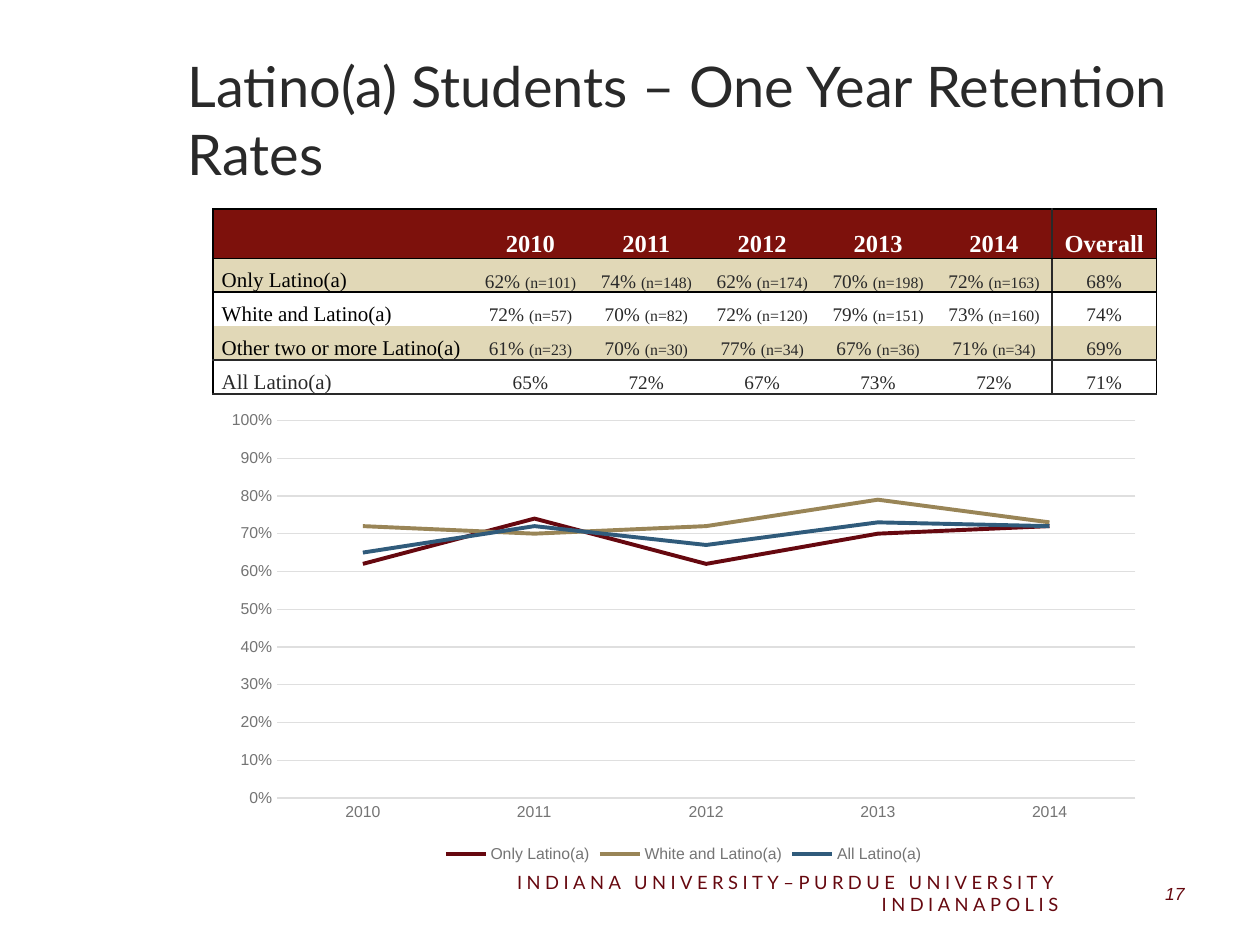
from lxml import etree
from pptx import Presentation
from pptx.chart.data import CategoryChartData
from pptx.dml.color import RGBColor
from pptx.enum.chart import XL_CHART_TYPE, XL_LEGEND_POSITION, XL_TICK_MARK
from pptx.enum.text import MSO_ANCHOR, PP_ALIGN
from pptx.oxml import parse_xml
from pptx.oxml.ns import nsdecls, qn
from pptx.util import Inches, Pt

LINE = XL_CHART_TYPE.LINE
BOTTOM = XL_LEGEND_POSITION.BOTTOM
NO_TICK = XL_TICK_MARK.NONE
MID, LOW = MSO_ANCHOR.MIDDLE, MSO_ANCHOR.BOTTOM
LEFT, MID_X, RIGHT = PP_ALIGN.LEFT, PP_ALIGN.CENTER, PP_ALIGN.RIGHT
PLAIN = "{2D5ABB26-0587-4C30-8999-92F81FD0307C}"  # table style without grid

SERIF, SANS, HEAD = "Times New Roman", "Arial", "Lato"
BLACK, DARK, GREY, PALE, WHITE = "000000", "292929", "747474", "DFDFDF", "FFFFFF"
WINE, BRICK, SAND = "66080F", "7D110C", "E1D8B7"
UNIT = Inches(0.1)  # the slide is a grid of 100 columns by 75 rows

ink = RGBColor.from_string


def write(par, text, size=11, face=SERIF, color=DARK, bold=False,
          slant=False, align=LEFT, gap=None):
    """Add a formatted run; gap is the letter spacing in points."""
    par.alignment = align
    run = par.add_run()
    run.text = text
    font = run.font
    font.size, font.name = Pt(size), face
    font.bold, font.italic = bold, slant
    font.color.rgb = ink(color)
    if gap:
        run._r.get_or_add_rPr().set("spc", str(round(gap * 100)))
    return run


deck = Presentation()
deck.slide_width, deck.slide_height = 100 * UNIT, 75 * UNIT
slide = deck.slides.add_slide(deck.slide_layouts[5])

# Title with a soft shadow under the letters
title = slide.shapes.title
title.left, title.top, title.width, title.height = (
    round(n * UNIT) for n in (13.9, 3.6, 81.1, 11.7))
title.text_frame.vertical_anchor = MID
run = write(title.text_frame.paragraphs[0],
            "Latino(a) Students – One Year Retention Rates",
            size=32, face=HEAD)
run._r.rPr.find(qn("a:latin")).addprevious(parse_xml(
    f'<a:effectLst {nsdecls("a")}><a:outerShdw blurRad="38100" dist="38100" '
    'dir="2700000" algn="tl"><a:srgbClr val="000000"><a:alpha val="43000"/>'
    '</a:srgbClr></a:outerShdw></a:effectLst>'))

# Footer and page number
for col, wide, text, form in (
    (38, 47, "INDIANA UNIVERSITY–PURDUE UNIVERSITY INDIANAPOLIS",
     {"size": 10.5, "face": HEAD, "gap": 2.6}),
    (86, 9, "17", {"size": 10, "face": SANS, "slant": True}),
):
    box = slide.shapes.add_textbox(
        *(round(n * UNIT) for n in (col, 68.9, wide, 4)))
    box.text_frame.word_wrap = True
    box.text_frame.vertical_anchor = MID
    write(box.text_frame.paragraphs[0], text, color=WINE, align=RIGHT, **form)

# Table of rates
years = ["2010", "2011", "2012", "2013", "2014"]
rows = [
    ["", *years, "Overall"],
    ["Only Latino(a)", "62% (n=101)", "74% (n=148)", "62% (n=174)",
     "70% (n=198)", "72% (n=163)", "68%"],
    ["White and Latino(a)", "72% (n=57)", "70% (n=82)", "72% (n=120)",
     "79% (n=151)", "73% (n=160)", "74%"],
    ["Other two or more Latino(a)", "61% (n=23)", "70% (n=30)", "77% (n=34)",
     "67% (n=36)", "71% (n=34)", "69%"],
    ["All Latino(a)", "65%", "72%", "67%", "73%", "72%", "71%"],
]
fills = [BRICK, SAND, WHITE, SAND, None]
wides = [20.6] + [9.2] * 5 + [8.3]
highs = [3.9] + [2.7] * 4
last = len(wides) - 1

frame = slide.shapes.add_table(
    len(rows), len(wides),
    *(round(n * UNIT) for n in (16.9, 16.6, sum(wides), sum(highs))))
table = frame.table
table._tbl.tblPr.find(qn("a:tableStyleId")).text = PLAIN
for col, wide in zip(table.columns, wides):
    col.width = round(wide * UNIT)
for row, high in zip(table.rows, highs):
    row.height = round(high * UNIT)

for r, row in enumerate(rows):
    for c, text in enumerate(row):
        cell = table.cell(r, c)
        cell.vertical_anchor = LOW
        cell.margin_left = cell.margin_right = Inches(0.07)
        cell.margin_top = cell.margin_bottom = 0
        if fills[r]:
            cell.fill.solid()
            cell.fill.fore_color.rgb = ink(fills[r])
        else:
            cell.fill.background()

        par = cell.text_frame.paragraphs[0]
        par.line_spacing = 1.07
        rate, mark, count = text.partition("(")
        if r == 0:
            write(par, text, size=14, color=WHITE, bold=True, align=MID_X)
        elif c == 0:
            write(par, text, size=12, color=DARK if r == 4 else BLACK)
        else:
            write(par, rate, align=MID_X)
            if mark:
                write(par, mark + count, size=9, align=MID_X)

        edges = {
            "lnL": {0: BLACK, last: DARK}.get(c),
            "lnR": {last - 1: DARK, last: BLACK}.get(c),
            "lnT": {0: BLACK, 1: BLACK, 4: DARK}.get(r),
            "lnB": {0: BLACK, 3: DARK, 4: DARK}.get(r),
        }
        shown = [(tag, hue) for tag, hue in edges.items() if hue]
        for spot, (tag, hue) in enumerate(shown):
            edge = etree.Element(qn(f"a:{tag}"), w=str(Pt(1)))
            fill = etree.SubElement(edge, qn("a:solidFill"))
            etree.SubElement(fill, qn("a:srgbClr"), val=hue)
            cell._tc.get_or_add_tcPr().insert(spot, edge)

# Line chart of the same rates
lines = [
    ("Only Latino(a)", WINE, (0.62, 0.74, 0.62, 0.70, 0.72)),
    ("White and Latino(a)", "998557", (0.72, 0.70, 0.72, 0.79, 0.73)),
    ("All Latino(a)", "305B7B", (0.65, 0.72, 0.67, 0.73, 0.72)),
]
data = CategoryChartData(number_format="0%")
data.categories = years
for name, hue, rates in lines:
    data.add_series(name, rates)
chart = slide.shapes.add_chart(
    LINE, *(round(n * UNIT) for n in (16.9, 31.9, 74.7, 37)), data).chart
chart.has_title = False
chart.font.size, chart.font.name = Pt(10), SANS
chart.font.color.rgb = ink(DARK)
chart.has_legend = True
chart.legend.position = BOTTOM
chart.legend.include_in_layout = False

for plot, (name, hue, rates) in zip(chart.plots[0].series, lines):
    plot.smooth = False
    plot.marker.style = None
    plot.format.line.width = Pt(2.25)
    plot.format.line.color.rgb = ink(hue)
    mark = plot._element.get_or_add_marker()
    mark.get_or_add_symbol().set("val", "none")

years_axis, rate_axis = chart.category_axis, chart.value_axis
for axis in (years_axis, rate_axis):
    axis.major_tick_mark = axis.minor_tick_mark = NO_TICK
for part in (years_axis.tick_labels, rate_axis.tick_labels, chart.legend):
    part.font.size, part.font.name = Pt(9), SANS
    part.font.color.rgb = ink(GREY)

rate_axis.minimum_scale, rate_axis.maximum_scale = 0, 1
rate_axis.major_unit = 0.1
rate_axis.tick_labels.number_format = "0%"
rate_axis.tick_labels.number_format_is_linked = False
rate_axis.format.line.fill.background()
rate_axis.has_major_gridlines = True
for rule in (years_axis.format.line, rate_axis.major_gridlines.format.line):
    rule.width = Pt(0.75)
    rule.color.rgb = ink(PALE)

deck.save("out.pptx")
